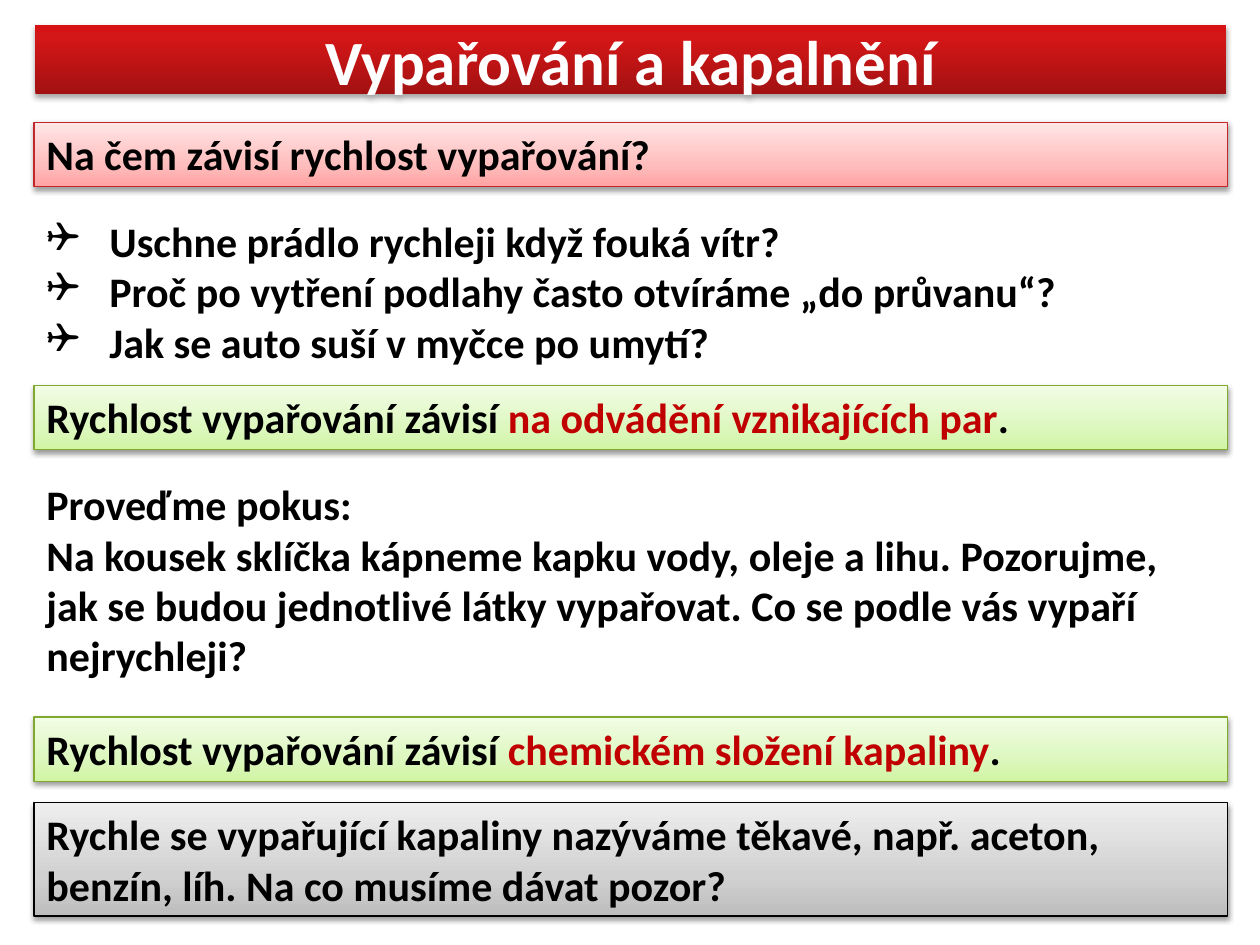
from dataclasses import dataclass

from lxml import etree
from pptx import Presentation
from pptx.dml.color import RGBColor
from pptx.enum.shapes import MSO_SHAPE
from pptx.enum.text import MSO_ANCHOR, MSO_AUTO_SIZE, PP_ALIGN
from pptx.oxml import parse_xml
from pptx.oxml.ns import nsdecls, qn
from pptx.util import Emu, Pt

RECTANGLE = MSO_SHAPE.RECTANGLE
TOP, MIDDLE = MSO_ANCHOR.TOP, MSO_ANCHOR.MIDDLE
LEFT, CENTER = PP_ALIGN.LEFT, PP_ALIGN.CENTER
NO_AUTOSIZE = MSO_AUTO_SIZE.NONE
TITLE_ONLY = 5
EMU_PER_PX = 9144  # 100 px to the inch


@dataclass(frozen=True)
class Palette:
    stops: tuple  # (position in percent, colour), from bottom to top
    line: str = ""


@dataclass(frozen=True)
class Theme:
    font: str = "Calibri"
    title_size: int = 36
    body_size: int = 24
    line_width: float = 0.75
    text: str = "000000"
    title_text: str = "FFFFFF"
    accent: str = "C00000"
    title: Palette = Palette(((0, "A21112"), (80, "D31617"), (100, "D71214")))
    red: Palette = Palette(((0, "FFA3A3"), (35, "FFBEBE"), (100, "FFE6E6")), "C22829")
    green: Palette = Palette(((0, "D0F5A3"), (35, "DDF7BF"), (100, "F2FDE6")), "82A92F")
    gray: Palette = Palette(((0, "BDBDBD"), (35, "D1D1D1"), (100, "EEEEEE")), "000000")


THEME = Theme()


def px(value):
    return Emu(value * EMU_PER_PX)


def set_gradient(shape, stops):
    """Fill the shape with a gradient that runs from bottom to top."""
    shape.fill.gradient()
    stop_xml = "".join(
        f'<a:gs pos="{position * 1000}"><a:srgbClr val="{color}"/></a:gs>'
        for position, color in stops
    )
    gradient = parse_xml(
        f'<a:gradFill {nsdecls("a")} rotWithShape="1"><a:gsLst>{stop_xml}</a:gsLst>'
        '<a:lin ang="16200000" scaled="0"/></a:gradFill>'
    )
    properties = shape.element.spPr
    properties.replace(properties.find(qn("a:gradFill")), gradient)


def set_shadow(shape, opacity, distance):
    shape.shadow.inherit = False
    effects = shape.element.spPr.find(qn("a:effectLst"))
    effects.append(parse_xml(
        f'<a:outerShdw {nsdecls("a")} blurRad="{Pt(3.1)}" dist="{Pt(distance)}" '
        'dir="5400000" rotWithShape="0"><a:srgbClr val="000000">'
        f'<a:alpha val="{opacity * 1000}"/></a:srgbClr></a:outerShdw>'
    ))


def set_bullet(paragraph, indent):
    properties = paragraph._p.get_or_add_pPr()
    properties.set("marL", str(px(indent)))
    properties.set("indent", str(-px(indent)))
    etree.SubElement(properties, qn("a:buFont")).set("typeface", "Wingdings")
    etree.SubElement(properties, qn("a:buChar")).set("char", "❑")


def write_text(frame, paragraphs, size, anchor=TOP, alignment=LEFT, bulleted=False):
    """Write paragraphs, each a list of (text, colour) runs."""
    frame.word_wrap = True
    frame.auto_size = NO_AUTOSIZE
    frame.vertical_anchor = anchor
    for index, runs in enumerate(paragraphs):
        paragraph = frame.add_paragraph() if index else frame.paragraphs[0]
        paragraph.alignment = alignment
        if bulleted:
            set_bullet(paragraph, 50)
        for text, color in runs:
            run = paragraph.add_run()
            run.text = text
            run.font.name = THEME.font
            run.font.size = Pt(size)
            run.font.bold = True
            run.font.color.rgb = RGBColor.from_string(color)


def add_title_bar(slide, box, text):
    title = slide.shapes.title
    title.left, title.top, title.width, title.height = map(px, box)
    set_gradient(title, THEME.title.stops)
    set_shadow(title, 35, 1.8)
    write_text(title.text_frame, [[(text, THEME.title_text)]],
               THEME.title_size, MIDDLE, CENTER)


def add_banner(slide, box, palette, runs):
    banner = slide.shapes.add_shape(RECTANGLE, *map(px, box))
    set_gradient(banner, palette.stops)
    banner.line.color.rgb = RGBColor.from_string(palette.line)
    banner.line.width = Pt(THEME.line_width)
    set_shadow(banner, 38, 1.6)
    write_text(banner.text_frame, [runs], THEME.body_size)


def add_text_block(slide, box, lines, bulleted=False):
    block = slide.shapes.add_textbox(*map(px, box))
    write_text(block.text_frame, [[(line, THEME.text)] for line in lines],
               THEME.body_size, bulleted=bulleted)


def conclusion(factor):
    """Runs of a rule with its deciding factor highlighted."""
    return [("Rychlost vypařování závisí ", THEME.text),
            (factor, THEME.accent), (".", THEME.text)]


def main():
    presentation = Presentation()
    presentation.slide_width, presentation.slide_height = px(1000), px(750)
    slide = presentation.slides.add_slide(presentation.slide_layouts[TITLE_ONLY])
    left, width, banner_height = 27, 947, 51

    # Title
    add_title_bar(slide, (28, 20, 945, 55), "Vypařování a kapalnění")

    # Question and everyday examples
    add_banner(slide, (left, 97, width, banner_height), THEME.red,
               [("Na čem závisí rychlost vypařování?", THEME.text)])
    add_text_block(slide, (left, 166, width, 132), [
        "Uschne prádlo rychleji když fouká vítr?",
        "Proč po vytření podlahy často otvíráme „do průvanu“?",
        "Jak se auto suší v myčce po umytí?",
    ], bulleted=True)
    add_banner(slide, (left, 306, width, banner_height), THEME.green,
               conclusion("na odvádění vznikajících par"))

    # Experiment and its conclusion
    add_text_block(slide, (left, 375, width, 174), [
        "Proveďme pokus:",
        "Na kousek sklíčka kápneme kapku vody, oleje a lihu. Pozorujme, "
        "jak se budou jednotlivé látky vypařovat. Co se podle vás vypaří nejrychleji?",
    ])
    add_banner(slide, (left, 569, width, banner_height), THEME.green,
               conclusion("chemickém složení kapaliny"))

    # Closing note
    add_banner(slide, (left, 637, width, 90), THEME.gray,
               [("Rychle se vypařující kapaliny nazýváme těkavé, např. aceton, "
                 "benzín, líh. Na co musíme dávat pozor?", THEME.text)])

    presentation.save("out.pptx")


if __name__ == "__main__":
    main()
